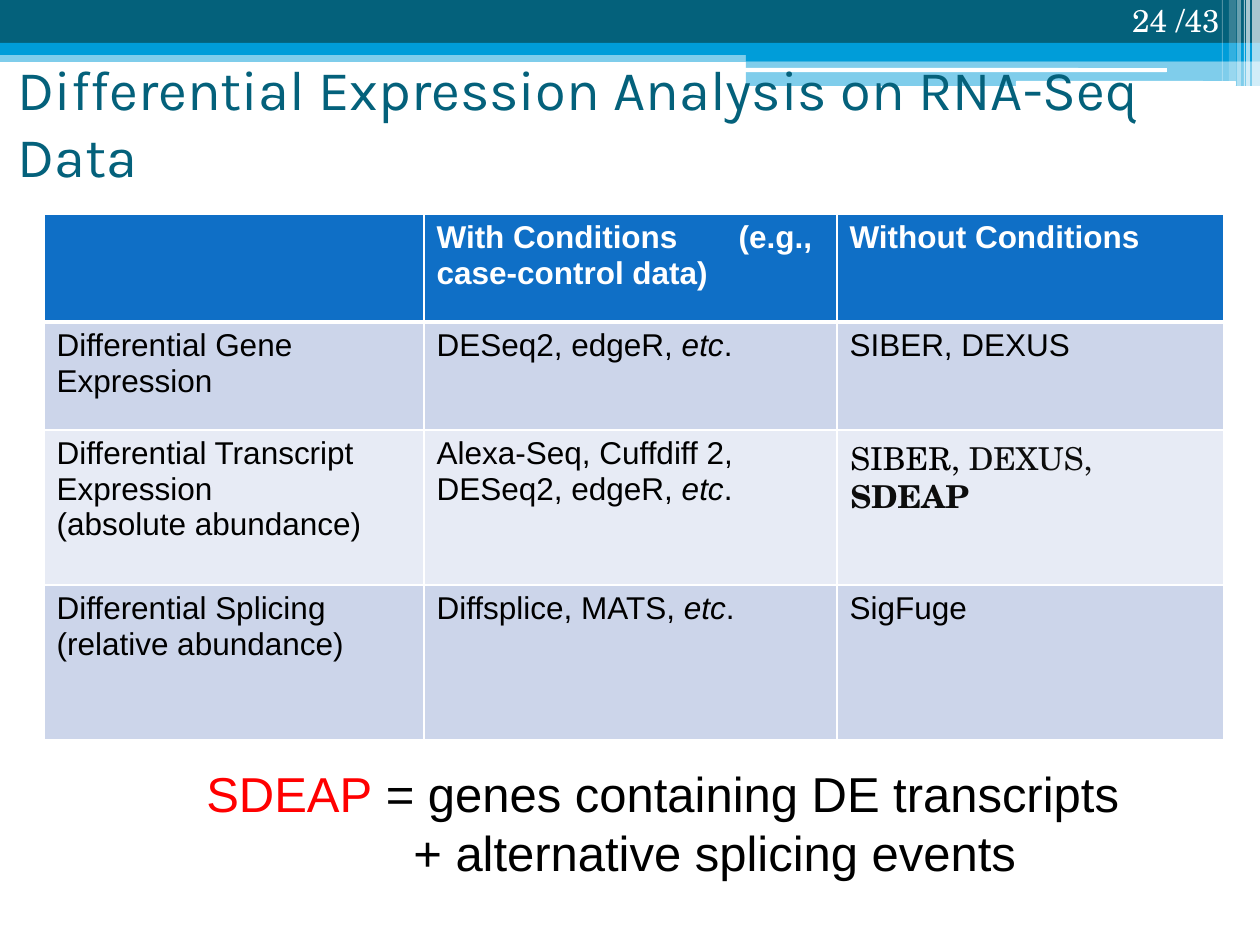
import dataclasses

import lxml.etree
import pptx
import pptx.dml.color
import pptx.enum.shapes
import pptx.enum.text
import pptx.oxml.ns
import pptx.util

PIXEL = 914400 / 126
RECTANGLE = pptx.enum.shapes.MSO_SHAPE.RECTANGLE
ROUNDED = pptx.enum.shapes.MSO_SHAPE.ROUNDED_RECTANGLE
ANCHOR = pptx.enum.text.MSO_ANCHOR


@dataclasses.dataclass(frozen=True)
class Theme:
    """Colours, fonts and type sizes of the slide."""
    teal: str = "04617B"
    cyan: str = "009DD9"
    header: str = "0F6FC6"
    bands: tuple = ("CCD5EA", "E7EBF5")
    white: str = "FFFFFF"
    black: str = "000000"
    near_black: str = "0D0D0D"
    red: str = "FF0000"
    title_font: str = "Karla"
    body_font: str = "Arial"
    serif_font: str = "TeX Gyre Schola"
    title_size: int = 32
    caption_size: int = 28
    body_size: int = 18


THEME = Theme()

BANNER = [
    (RECTANGLE, 0, 50, 1260, 12, THEME.cyan, 50),
    (RECTANGLE, 0, 0, 1260, 43, THEME.teal, 100),
    (RECTANGLE, 0, 43, 1260, 12, THEME.cyan, 100),
    (RECTANGLE, 746, 49, 514, 12, THEME.cyan, 100),
    (RECTANGLE, 746, 61, 514, 25, THEME.cyan, 50),
    (ROUNDED, 745, 68, 422, 4, THEME.white, 100),
    (ROUNDED, 1016, 81, 220, 5, THEME.white, 100),
]
PINSTRIPES = [
    (1252, 8, 86, 65),
    (1246, 4, 86, 65),
    (1244, 1, 86, 60),
    (1237, 4, 86, 40),
    (1229, 7, 81, 20),
    (1222, 1, 81, 30),
]

COLUMN_WIDTHS = [380, 413, 387]
ROW_HEIGHTS = [108, 108, 155, 155]
CONDITION_TAB = 302
ROWS = [
    [[], ["With Conditions\t(e.g., case-control data)"], ["Without Conditions"]],
    [["Differential Gene Expression"], ["DESeq2, edgeR, *etc*."], ["SIBER, DEXUS"]],
    [["Differential Transcript Expression", "(absolute abundance)"],
     ["Alexa-Seq, Cuffdiff 2, DESeq2, edgeR, *etc*."], []],
    [["Differential Splicing", "(relative abundance)"],
     ["Diffsplice, MATS, *etc*."], ["SigFuge"]],
]


def px(*lengths):
    """Turn pixel lengths into a list of EMU."""
    return [pptx.util.Emu(round(length * PIXEL)) for length in lengths]


def rgb(color):
    """Turn a hex string into a colour."""
    return pptx.dml.color.RGBColor.from_string(color)


def add_element(parent, tag, **attributes):
    """Append a DrawingML element to a parent."""
    element = lxml.etree.SubElement(parent, pptx.oxml.ns.qn(tag))
    for name, value in attributes.items():
        element.set(name, str(value))
    return element


def add_bar(slide, kind, left, top, width, height, color, opacity):
    """Add a borderless bar with the given opacity in percent."""
    shape = slide.shapes.add_shape(kind, *px(left, top, width, height))
    shape.shadow.inherit = False
    shape.line.fill.background()
    shape.fill.solid()
    shape.fill.fore_color.rgb = rgb(color)
    if opacity < 100:
        fill_color = shape.element.spPr.xpath("./a:solidFill/a:srgbClr")[0]
        add_element(fill_color, "a:alpha", val=opacity * 1000)


def add_run(paragraph, text, font, size, color, bold=False, italic=False):
    """Add one formatted run to a paragraph."""
    run = paragraph.add_run()
    run.text = text
    run.font.name = font
    run.font.size = pptx.util.Pt(size)
    run.font.color.rgb = rgb(color)
    run.font.bold = bold
    run.font.italic = italic


def add_text_box(slide, left, top, width, height, anchor=ANCHOR.TOP, grow=False):
    """Add a wrapping text box and return its first paragraph."""
    frame = slide.shapes.add_textbox(*px(left, top, width, height)).text_frame
    frame.word_wrap = True
    frame.vertical_anchor = anchor
    if grow:
        frame.auto_size = pptx.enum.text.MSO_AUTO_SIZE.SHAPE_TO_FIT_TEXT
    return frame.paragraphs[0]


def set_borders(cell, row):
    """Give a cell white borders, heavier between header and body."""
    properties = cell._tc.get_or_add_tcPr()
    heavy = {0: "B", 1: "T"}.get(row)
    for side in "LRTB":
        width = pptx.util.Pt(3 if side == heavy else 1)
        line = add_element(properties, f"a:ln{side}", w=width)
        add_element(add_element(line, "a:solidFill"), "a:srgbClr", val=THEME.white)


def fill_cell(cell, row, lines):
    """Colour a cell and write its lines, with starred parts in italics."""
    is_header = row == 0
    set_borders(cell, row)
    cell.fill.solid()
    cell.fill.fore_color.rgb = rgb(THEME.header if is_header else THEME.bands[(row - 1) % 2])
    color = THEME.white if is_header else THEME.black
    for index, line in enumerate(lines):
        frame = cell.text_frame
        paragraph = frame.add_paragraph() if index else frame.paragraphs[0]
        if "\t" in line:
            tabs = add_element(paragraph._p.get_or_add_pPr(), "a:tabLst")
            add_element(tabs, "a:tab", pos=px(CONDITION_TAB)[0], algn="l")
        for part, text in enumerate(line.split("*")):
            add_run(paragraph, text, THEME.body_font, THEME.body_size, color,
                    bold=is_header, italic=part % 2 == 1)


def add_method_table(slide):
    """Add the table of analysis methods."""
    table = slide.shapes.add_table(
        len(ROWS), len(COLUMN_WIDTHS),
        *px(44, 214, sum(COLUMN_WIDTHS), sum(ROW_HEIGHTS))).table
    table.horz_banding = False
    for column, width in zip(table.columns, px(*COLUMN_WIDTHS)):
        column.width = width
    for table_row, height in zip(table.rows, px(*ROW_HEIGHTS)):
        table_row.height = height
    for row, contents in enumerate(ROWS):
        for column, lines in enumerate(contents):
            fill_cell(table.cell(row, column), row, lines)


def add_caption(slide):
    """Add the definition of SDEAP with a hanging second line."""
    paragraph = add_text_box(slide, 194, 757, 948, 131, grow=True)
    indent = px(207)[0]
    properties = paragraph._p.get_or_add_pPr()
    properties.set("marL", str(indent))
    properties.set("indent", str(-indent))
    style = (THEME.body_font, THEME.caption_size)
    add_run(paragraph, "SDEAP", *style, THEME.red)
    add_run(paragraph, " = genes containing DE transcripts", *style, THEME.black)
    paragraph.add_line_break()
    add_run(paragraph, "+ alternative splicing events", *style, THEME.black)


def main():
    """Build and save the slide."""
    presentation = pptx.Presentation()
    presentation.slide_width, presentation.slide_height = px(1260, 945)
    slide = presentation.slides.add_slide(presentation.slide_layouts[6])
    for bar in BANNER:
        add_bar(slide, *bar)
    for left, width, height, opacity in PINSTRIPES:
        add_bar(slide, RECTANGLE, left, 0, width, height, THEME.white, opacity)

    title = add_text_box(slide, 5, 48, 1255, 147, ANCHOR.MIDDLE)
    add_run(title, "Differential Expression Analysis on RNA-Seq Data",
            THEME.title_font, THEME.title_size, THEME.teal)
    serif = (THEME.serif_font, THEME.body_size)
    page_number = add_text_box(slide, 1057, -5, 175, 50, ANCHOR.BOTTOM)
    page_number.alignment = pptx.enum.text.PP_ALIGN.RIGHT
    add_run(page_number, "24 /43", *serif, THEME.white)

    add_method_table(slide)
    add_caption(slide)
    transcript_tools = add_text_box(slide, 838, 433, 378, 89, grow=True)
    add_run(transcript_tools, "SIBER, ", *serif, THEME.black)
    add_run(transcript_tools, "DEXUS, ", *serif, THEME.near_black)
    add_run(transcript_tools, "SDEAP", *serif, THEME.near_black, bold=True)
    presentation.save("out.pptx")


if __name__ == "__main__":
    main()
